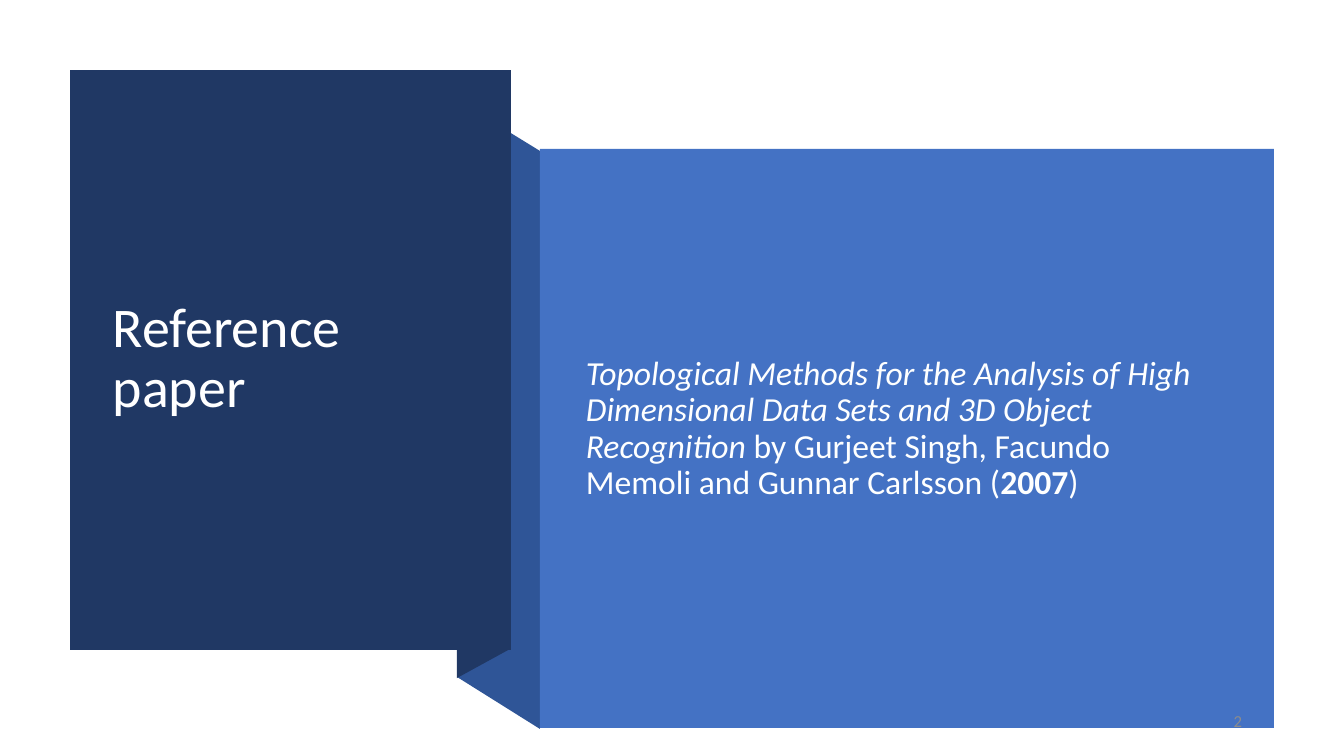
import pptx
import pptx.util
import pptx.dml.color
import pptx.enum.shapes
import pptx.enum.text

PX = 914400 / 100.8
COLORS = {
    "navy": "203864",
    "fold": "2F5597",
    "blue": "4472C4",
    "white": "FFFFFF",
    "body": "FEFFFF",
    "gray": "8C8C8C",
}


def paint(sp, color):
    sp.shadow.inherit = False
    sp.fill.solid()
    sp.fill.fore_color.rgb = pptx.dml.color.RGBColor.from_string(COLORS[color])
    sp.line.fill.background()


def add_text(box, size, color, runs, spacing=None):
    sp = slide.shapes.add_textbox(*[round(v * PX) for v in box])
    tf = sp.text_frame
    tf.word_wrap = True
    tf.vertical_anchor = pptx.enum.text.MSO_ANCHOR.MIDDLE
    p = tf.paragraphs[0]
    p.line_spacing = spacing
    p.font.name = "Calibri"
    p.font.size = pptx.util.Pt(size)
    p.font.color.rgb = pptx.dml.color.RGBColor.from_string(COLORS[color])
    for text, bold, italic in runs:
        r = p.add_run()
        r.text = text
        r.font.bold = bold
        r.font.italic = italic
    return p


prs = pptx.Presentation()
prs.slide_width = round(1344 * PX)
prs.slide_height = round(756 * PX)
slide = prs.slides.add_slide(prs.slide_layouts[6])

ribbon = [
    ("fold", [(540, 729), (457, 677), (457, 100), (540, 151)]),
    ("navy", [(510, 649), (457, 678), (457, 99), (510, 70)]),
]
for color, points in ribbon:
    fb = slide.shapes.build_freeform(*points[0], scale=PX)
    fb.add_line_segments(points[1:], close=True)
    paint(fb.convert_to_shape(), color)

panels = [
    ("navy", (70, 70, 441, 580)),
    ("blue", (540, 149, 734, 579)),
]
for color, box in panels:
    sp = slide.shapes.add_shape(
        pptx.enum.shapes.MSO_SHAPE.RECTANGLE, *[round(v * PX) for v in box])
    paint(sp, color)

add_text((103, 108, 374, 503), 40, "white",
         [("Reference paper", None, None)], 0.9)

citation = [
    ("Topological Methods for the Analysis of High Dimensional Data Sets "
     "and 3D Object Recognition ", None, True),
    ("by Gurjeet Singh, Facundo Memoli and Gunnar Carlsson (", None, None),
    ("2007", True, None),
    (")", None, None),
]
p = add_text((576, 190, 656, 478), 24, "body", citation, 0.9)
p.space_before = pptx.util.Pt(10)

p = add_text((950, 701, 302, 40), 12, "gray", [("2", None, None)])
p.alignment = pptx.enum.text.PP_ALIGN.RIGHT

prs.save("out.pptx")
